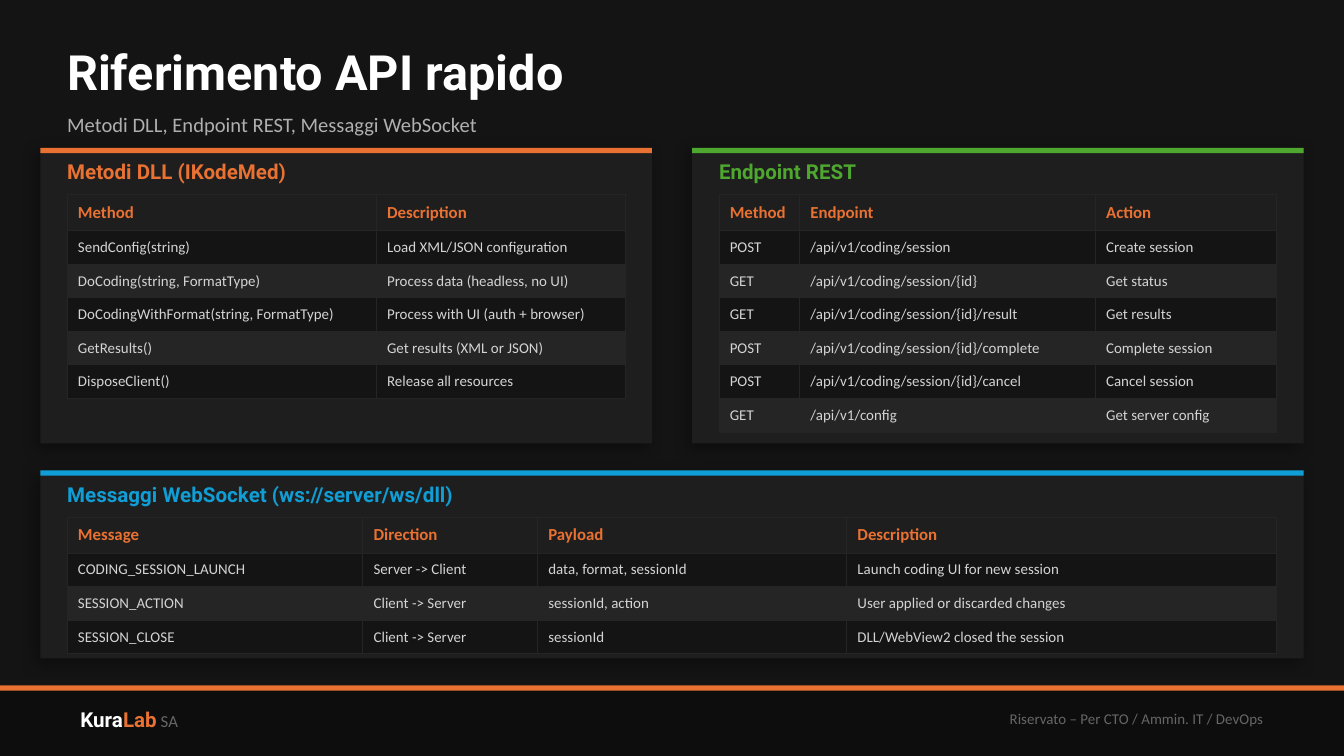
from lxml.etree import SubElement
from pptx import Presentation
from pptx.dml.color import RGBColor
from pptx.enum.shapes import MSO_SHAPE
from pptx.enum.text import MSO_ANCHOR, PP_ALIGN
from pptx.oxml import parse_xml
from pptx.oxml.ns import nsdecls
from pptx.util import Pt

PX = 4572  # 200 px to the inch
BACKGROUND, FOOTER, CARD, STRIPE = "141414", "0D0D0D", "1E1E1E", "252525"
ORANGE, GREEN, BLUE = "E97132", "4EA72E", "0F9ED5"
WHITE, LIGHT, MUTED, DIM = "FFFFFF", "D4D4D4", "B0B0B0", "666666"

TITLE = {"name": "Roboto", "size": Pt(26), "bold": True}
HEADING = {"name": "Roboto", "size": Pt(11), "bold": True}
SUBTITLE = {"name": "Calibri", "size": Pt(11), "bold": False}
TABLE_HEAD = {"name": "Calibri", "size": Pt(9), "bold": True}
SMALL = {"name": "Calibri", "size": Pt(9), "bold": False}
BODY = {"name": "Calibri", "size": Pt(8), "bold": False}

NO_MARGINS = dict.fromkeys(("margin_left", "margin_top", "margin_right", "margin_bottom"), 0)
FOOTER_MARGINS = {"margin_left": 20 * PX, "margin_right": 20 * PX,
                  "margin_top": 10 * PX, "margin_bottom": 10 * PX}
CELL_FORMAT = {"margin_left": 16 * PX, "margin_right": 16 * PX,
               "margin_top": 11 * PX, "margin_bottom": 11 * PX,
               "vertical_anchor": MSO_ANCHOR.MIDDLE}
HEAD_HEIGHT, ROW_HEIGHT = 53, 50

presentation = Presentation()
presentation.slide_width = 2000 * PX
presentation.slide_height = 1125 * PX
slide = presentation.slides.add_slide(presentation.slide_layouts[6])
slide.background.fill.solid()
slide.background.fill.fore_color.rgb = RGBColor.from_string(BACKGROUND)


def add_rectangle(left, top, width, height, color):
    shape = slide.shapes.add_shape(
        MSO_SHAPE.RECTANGLE, left * PX, top * PX, width * PX, height * PX)
    shape.shadow.inherit = False
    shape.fill.solid()
    shape.fill.fore_color.rgb = RGBColor.from_string(color)
    shape.line.fill.background()
    return shape


def write_runs(paragraph, runs):
    """Add (text, font format, colour) runs to a paragraph."""
    for text, font_format, color in runs:
        run = paragraph.add_run()
        run.text = text
        for name, value in font_format.items():
            setattr(run.font, name, value)
        run.font.color.rgb = RGBColor.from_string(color)


add_rectangle(0, 1020, 2000, 105, FOOTER)
add_rectangle(0, 1020, 2000, 8, ORANGE)

# Each card: box, accent colour, heading, column widths, rows
cards = [
    ((60, 220, 910, 440), ORANGE, "Metodi DLL (IKodeMed)", (460, 370), [
        ("Method", "Description"),
        ("SendConfig(string)", "Load XML/JSON configuration"),
        ("DoCoding(string, FormatType)", "Process data (headless, no UI)"),
        ("DoCodingWithFormat(string, FormatType)", "Process with UI (auth + browser)"),
        ("GetResults()", "Get results (XML or JSON)"),
        ("DisposeClient()", "Release all resources"),
    ]),
    ((1030, 220, 910, 440), GREEN, "Endpoint REST", (120, 440, 270), [
        ("Method", "Endpoint", "Action"),
        ("POST", "/api/v1/coding/session", "Create session"),
        ("GET", "/api/v1/coding/session/{id}", "Get status"),
        ("GET", "/api/v1/coding/session/{id}/result", "Get results"),
        ("POST", "/api/v1/coding/session/{id}/complete", "Complete session"),
        ("POST", "/api/v1/coding/session/{id}/cancel", "Cancel session"),
        ("GET", "/api/v1/config", "Get server config"),
    ]),
    ((60, 700, 1880, 280), BLUE, "Messaggi WebSocket (ws://server/ws/dll)",
     (440, 260, 460, 640), [
        ("Message", "Direction", "Payload", "Description"),
        ("CODING_SESSION_LAUNCH", "Server -> Client", "data, format, sessionId",
         "Launch coding UI for new session"),
        ("SESSION_ACTION", "Client -> Server", "sessionId, action",
         "User applied or discarded changes"),
        ("SESSION_CLOSE", "Client -> Server", "sessionId",
         "DLL/WebView2 closed the session"),
    ]),
]

texts = [
    ((100, 1030, 600, 80), FOOTER_MARGINS, PP_ALIGN.LEFT,
     [("Kura", HEADING, WHITE), ("Lab", HEADING, ORANGE), (" SA", SMALL, DIM)]),
    ((1100, 1030, 800, 80), FOOTER_MARGINS, PP_ALIGN.RIGHT,
     [("Riservato – Per CTO / Ammin. IT / DevOps", BODY, DIM)]),
    ((100, 50, 1800, 110), NO_MARGINS, PP_ALIGN.LEFT,
     [("Riferimento API rapido", TITLE, WHITE)]),
    ((100, 150, 1800, 70), NO_MARGINS, PP_ALIGN.LEFT,
     [("Metodi DLL, Endpoint REST, Messaggi WebSocket", SUBTITLE, MUTED)]),
]

for (left, top, width, height), accent, heading, column_widths, rows in cards:
    card = add_rectangle(left, top, width, height, CARD)
    effects = card.element.spPr.find("{*}effectLst")
    effects.append(parse_xml(
        f'<a:outerShdw {nsdecls("a")} blurRad="{Pt(8)}" dist="{Pt(3)}" dir="8100000" '
        'algn="bl" rotWithShape="0"><a:srgbClr val="000000"><a:alpha val="35000"/>'
        '</a:srgbClr></a:outerShdw>'))
    add_rectangle(left, top, width, 8, accent)
    texts.append(((left + 40, top + 10, width - 80, 50), NO_MARGINS, PP_ALIGN.LEFT,
                  [(heading, HEADING, accent)]))

    table_height = HEAD_HEIGHT + ROW_HEIGHT * (len(rows) - 1)
    table = slide.shapes.add_table(
        len(rows), len(column_widths), (left + 40) * PX, (top + 70) * PX,
        sum(column_widths) * PX, table_height * PX).table
    table.horz_banding = False
    for column, column_width in zip(table.columns, column_widths):
        column.width = column_width * PX
    for row_index, row in enumerate(rows):
        is_head = row_index == 0
        table.rows[row_index].height = (HEAD_HEIGHT if is_head else ROW_HEIGHT) * PX
        fill = CARD if is_head else (STRIPE, BACKGROUND)[row_index % 2]
        font_format, color = (TABLE_HEAD, ORANGE) if is_head else (BODY, LIGHT)
        for column_index, text in enumerate(row):
            cell = table.cell(row_index, column_index)
            for name, value in CELL_FORMAT.items():
                setattr(cell, name, value)
            properties = cell._tc.get_or_add_tcPr()
            for side in "LRTB":
                properties.append(parse_xml(
                    f'<a:ln{side} {nsdecls("a")} w="{Pt(0.5)}"><a:solidFill>'
                    f'<a:srgbClr val="{STRIPE}"/></a:solidFill></a:ln{side}>'))
            cell.fill.solid()
            cell.fill.fore_color.rgb = RGBColor.from_string(fill)
            write_runs(cell.text_frame.paragraphs[0], [(text, font_format, color)])

for box, margins, alignment, runs in texts:
    text_frame = slide.shapes.add_textbox(*(length * PX for length in box)).text_frame
    text_frame.word_wrap = True
    text_frame.vertical_anchor = MSO_ANCHOR.MIDDLE
    for name, value in margins.items():
        setattr(text_frame, name, value)
    paragraph = text_frame.paragraphs[0]
    paragraph.alignment = alignment
    write_runs(paragraph, runs)

presentation.save("out.pptx")
